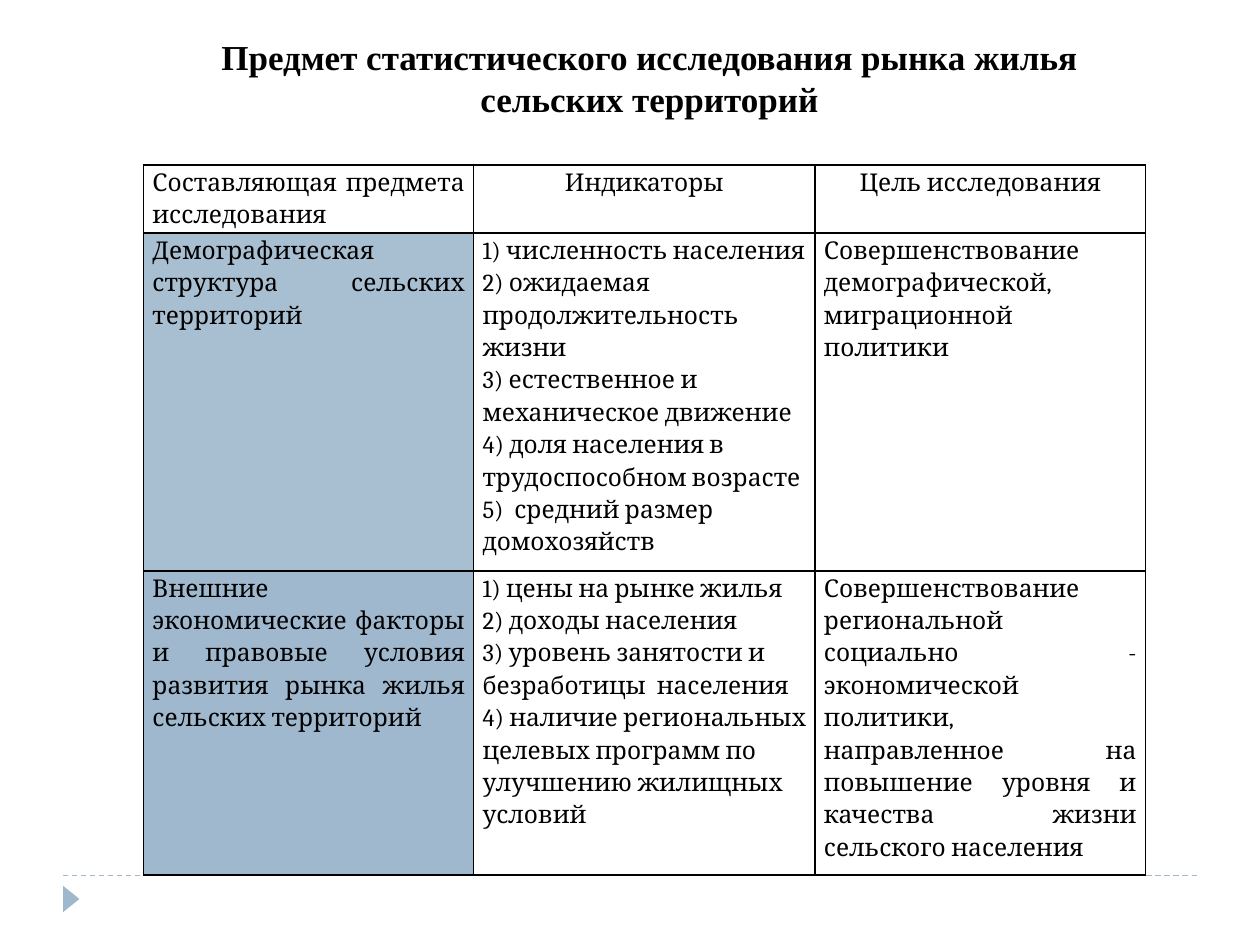
from dataclasses import dataclass

from lxml.etree import SubElement
from pptx import Presentation
from pptx.dml.color import RGBColor
from pptx.enum.dml import MSO_LINE_DASH_STYLE as Dash
from pptx.enum.shapes import MSO_CONNECTOR as Connector, MSO_SHAPE as Shape
from pptx.enum.text import MSO_ANCHOR as Anchor, MSO_AUTO_SIZE as AutoSize, PP_ALIGN as Align
from pptx.oxml.ns import qn
from pptx.util import Inches, Pt


@dataclass(frozen=True)
class Theme:
    ink: str = "000000"
    accent: str = "9FB8CD"
    title_font: str = "Times New Roman"
    body_font: str = "Cambria"
    title_size: int = 20
    body_size: int = 14
    border: float = 1
    rule: float = 0.75
    line_spacing: float = 1.15


THEME = Theme()
TITLE = "Предмет статистического исследования рынка жилья сельских территорий"
HEADERS = ["Составляющая предмета исследования", "Индикаторы", "Цель исследования"]
SUBJECTS = [
    (
        "Демографическая структура сельских территорий",
        [
            "1) численность населения",
            "2) ожидаемая продолжительность жизни",
            "3) естественное и механическое движение",
            "4) доля населения в трудоспособном возрасте",
            "5)  средний размер домохозяйств",
        ],
        "Совершенствование демографической, миграционной политики",
    ),
    (
        "Внешние экономические факторы и правовые условия развития рынка жилья сельских территорий",
        [
            "1) цены на рынке жилья",
            "2) доходы населения",
            "3) уровень занятости и безработицы  населения",
            "4) наличие региональных целевых программ по улучшению жилищных условий",
        ],
        "Совершенствование региональной социально - экономической политики, "
        "направленное на повышение уровня и качества жизни сельского населения",
    ),
]
COLUMN_WIDTHS = [2.62, 2.71, 2.62]
ROW_HEIGHTS = [0.54, 2.68, 2.41]
HEADER_ALIGNS = [Align.JUSTIFY, Align.CENTER, Align.CENTER]
BODY_ALIGNS = [Align.JUSTIFY, Align.LEFT, Align.JUSTIFY]
SUBJECT_OPACITY = {1: 90, 2: 100}


def color(value):
    return RGBColor.from_string(value)


def format_para(para, align, font, size, bold=False):
    para.alignment = align
    for span in para.runs:
        span.font.name = font
        span.font.size = Pt(size)
        span.font.bold = bold
        span.font.color.rgb = color(THEME.ink)


def add_title(page, left, top, width, height):
    title = page.shapes.title
    title.left, title.top = Inches(left), Inches(top)
    title.width, title.height = Inches(width), Inches(height)
    frame = title.text_frame
    frame.text = TITLE
    frame.word_wrap = True
    frame.auto_size = AutoSize.SHAPE_TO_FIT_TEXT
    frame.vertical_anchor = Anchor.TOP
    format_para(frame.paragraphs[0], Align.CENTER, THEME.title_font, THEME.title_size, True)


def add_footer_mark(page, left, top, width):
    rule = page.shapes.add_connector(
        Connector.STRAIGHT, Inches(left), Inches(top), Inches(left + width), Inches(top)
    )
    rule.line.color.rgb = color(THEME.accent)
    rule.line.width = Pt(THEME.rule)
    rule.line.dash_style = Dash.DASH
    SubElement(rule._element.spPr, qn("a:effectLst"))

    marker = page.shapes.add_shape(
        Shape.ISOSCELES_TRIANGLE,
        Inches(left - 0.04), Inches(top + 0.12), Inches(0.21), Inches(0.13),
    )
    marker.rotation = 90
    marker.shadow.inherit = False
    marker.fill.solid()
    marker.fill.fore_color.rgb = color(THEME.accent)
    marker.line.fill.background()


def add_borders(cell):
    properties = cell._tc.get_or_add_tcPr()
    for side in ("a:lnL", "a:lnR", "a:lnT", "a:lnB"):
        line = SubElement(properties, qn(side), w=str(Pt(THEME.border)))
        fill = SubElement(line, qn("a:solidFill"))
        SubElement(fill, qn("a:srgbClr"), val=THEME.ink)


def fill_cell(cell, opacity):
    if opacity is None:
        cell.fill.background()
        return
    cell.fill.solid()
    cell.fill.fore_color.rgb = color(THEME.accent)
    if opacity < 100:
        tint = cell._tc.tcPr.find(qn("a:solidFill")).find(qn("a:srgbClr"))
        SubElement(tint, qn("a:alpha"), val=str(opacity * 1000))


def write_cell(cell, content, align):
    cell.margin_left = cell.margin_right = Inches(0.07)
    cell.margin_top = cell.margin_bottom = 0
    cell.vertical_anchor = Anchor.TOP
    cell.text_frame.text = content if isinstance(content, str) else "\n".join(content)
    for para in cell.text_frame.paragraphs:
        para.line_spacing = THEME.line_spacing
        format_para(para, align, THEME.body_font, THEME.body_size)


def add_subject_table(page, left, top):
    rows = [HEADERS, *SUBJECTS]
    table = page.shapes.add_table(
        len(rows), len(HEADERS), Inches(left), Inches(top),
        Inches(sum(COLUMN_WIDTHS)), Inches(sum(ROW_HEIGHTS)),
    ).table
    table.first_row = False
    table.horz_banding = False
    for column, width in zip(table.columns, COLUMN_WIDTHS):
        column.width = Inches(width)
    for row, height in zip(table.rows, ROW_HEIGHTS):
        row.height = Inches(height)
    for row_index, contents in enumerate(rows):
        aligns = BODY_ALIGNS if row_index else HEADER_ALIGNS
        for column_index, (content, align) in enumerate(zip(contents, aligns)):
            cell = table.cell(row_index, column_index)
            write_cell(cell, content, align)
            add_borders(cell)
            fill_cell(cell, None if column_index else SUBJECT_OPACITY.get(row_index))


def main():
    deck = Presentation()
    deck.slide_width, deck.slide_height = Inches(10), Inches(7.5)
    page = deck.slides.add_slide(deck.slide_layouts[5])
    add_footer_mark(page, 0.5, 6.95, 9)
    add_title(page, 1.25, 0.23, 7.81, 0.77)
    add_subject_table(page, 1.14, 1.31)
    deck.save("out.pptx")


if __name__ == "__main__":
    main()
